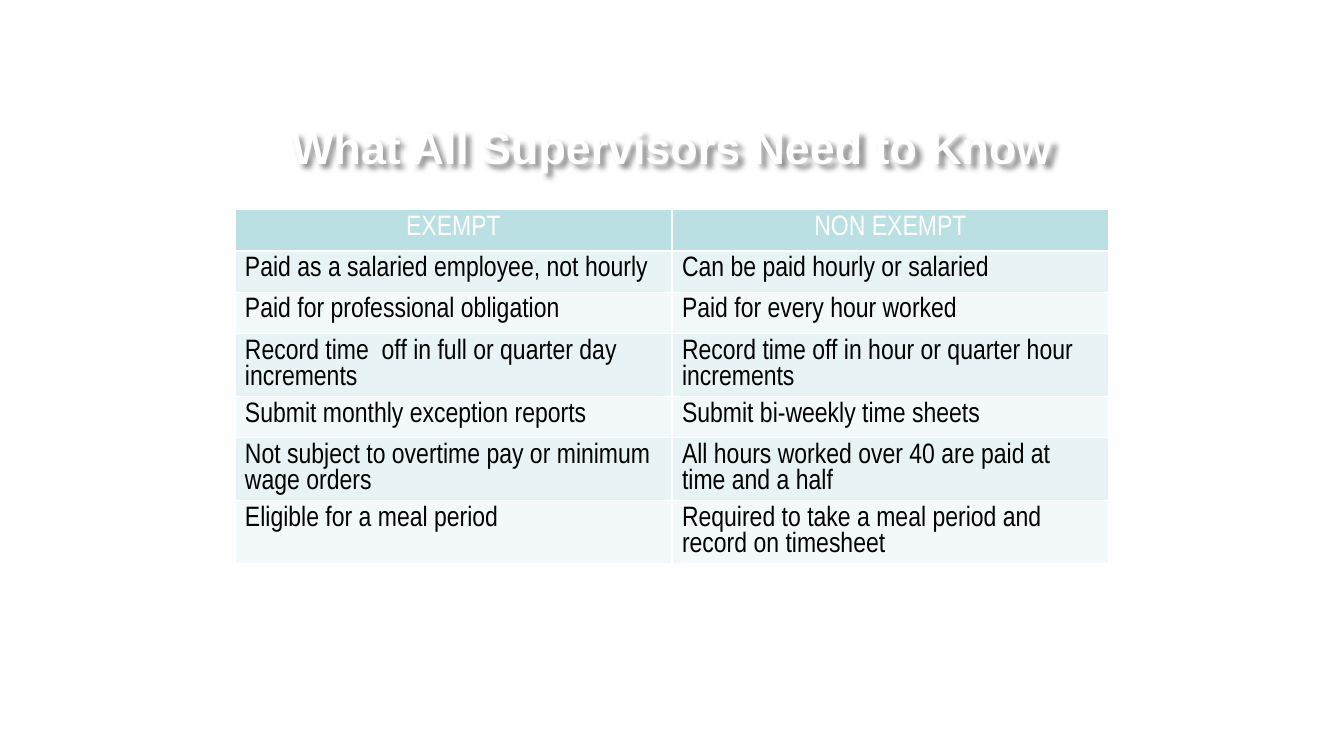
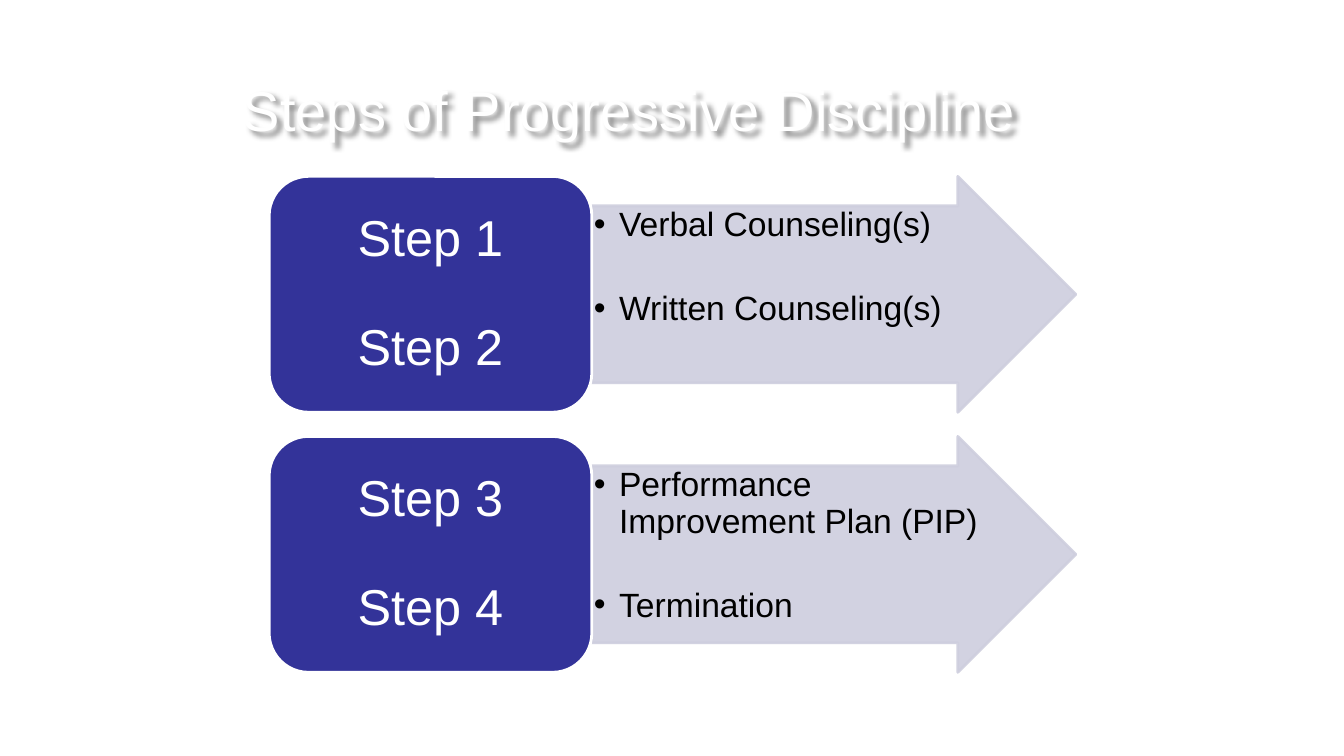
from lxml import etree
from pptx import Presentation
from pptx import util as u
from pptx.dml.color import RGBColor
from pptx.enum import shapes, text
from pptx.oxml.ns import qn

COLORS = {
    "white": "FFFFFF",
    "black": "000000",
    "header": "BBE0E3",
    "band_dark": "E7F3F4",
    "band_light": "F3F9FA",
    "step": "333399",
    "arrow": "CECEDE",
}
FONT = "Arial"
TABLE_FONT = "Arial Narrow"
TITLE_ONLY = 5

COMPARISON = [
    ("EXEMPT", "NON EXEMPT"),
    ("Paid as a salaried employee, not hourly", "Can be paid hourly or salaried"),
    ("Paid for professional obligation", "Paid for every hour worked"),
    ("Record time  off in full or quarter day increments",
     "Record time off in hour or quarter hour increments"),
    ("Submit monthly exception reports", "Submit bi-weekly time sheets"),
    ("Not subject to overtime pay or minimum wage orders",
     "All hours worked over 40 are paid at time and a half"),
    ("Eligible for a meal period",
     "Required to take a meal period and record on timesheet"),
]
STAGES = [
    (("Step 1", "Step 2"), ("Verbal Counseling(s)", "Written Counseling(s)")),
    (("Step 3", "Step 4"), ("Performance Improvement Plan (PIP)", "Termination")),
]


def rgb(name):
    return RGBColor.from_string(COLORS[name])


def add_element(parent, tag, **attributes):
    return etree.SubElement(parent, qn(tag), attributes)


def write(frame, lines, size, color, font=FONT, bold=False, spacing=None,
          align=text.PP_ALIGN.LEFT, gap=0, bullet=False):
    """Fill a text frame with one paragraph per line."""
    frame.word_wrap = True
    for index, line in enumerate(lines):
        para = frame.add_paragraph() if index else frame.paragraphs[0]
        if bullet:
            properties = para._p.get_or_add_pPr()
            properties.set("marL", str(u.Inches(0.25)))
            properties.set("indent", str(u.Inches(-0.25)))
            add_element(properties, "a:buFont", typeface=font)
            add_element(properties, "a:buChar", char="•")
        para.alignment = align
        if spacing:
            para.line_spacing = spacing
        if index:
            para.space_before = u.Pt(gap)
        span = para.add_run()
        span.text = line
        span.font.name = font
        span.font.size = u.Pt(size)
        span.font.bold = bold
        span.font.color.rgb = rgb(color)


def set_insets(frame, across, down):
    frame.margin_left = frame.margin_right = u.Inches(across)
    frame.margin_top = frame.margin_bottom = u.Inches(down)


def add_page(deck, title, left, top, size, bold=False):
    """Add a slide with a white, shadowed title."""
    page = deck.slides.add_slide(deck.slide_layouts[TITLE_ONLY])
    box = page.shapes.title
    box.left, box.top = u.Inches(left), u.Inches(top)
    box.width, box.height = u.Inches(10.67), u.Inches(0.66)
    frame = box.text_frame
    frame.auto_size = text.MSO_AUTO_SIZE.NONE
    frame.vertical_anchor = text.MSO_ANCHOR.MIDDLE
    write(frame, [title], size, "white", bold=bold, align=text.PP_ALIGN.CENTER)
    effects = add_element(box._element.spPr, "a:effectLst")
    shadow = add_element(effects, "a:outerShdw", blurRad=str(u.Pt(4)),
                         dist=str(u.Pt(4)), dir="2700000", algn="tl", rotWithShape="0")
    shade = add_element(shadow, "a:srgbClr", val=COLORS["black"])
    add_element(shade, "a:alpha", val="43000")
    return page


def add_borders(cell):
    properties = cell._tc.get_or_add_tcPr()
    for side in ("a:lnL", "a:lnR", "a:lnT", "a:lnB"):
        line = add_element(properties, side, w=str(u.Pt(1)))
        fill = add_element(line, "a:solidFill")
        add_element(fill, "a:srgbClr", val=COLORS["white"])


def add_comparison(page, rows, left, top, width, row_height):
    """Two-column table with a header and banded rows."""
    table = page.shapes.add_table(
        len(rows), len(rows[0]), u.Inches(left), u.Inches(top),
        u.Inches(width), u.Inches(row_height * len(rows))).table
    for row_index, row in enumerate(rows):
        header = row_index == 0
        band = "header" if header else ("band_light", "band_dark")[row_index % 2]
        for column_index, words in enumerate(row):
            cell = table.cell(row_index, column_index)
            add_borders(cell)
            cell.fill.solid()
            cell.fill.fore_color.rgb = rgb(band)
            write(cell.text_frame, [words], 20, "white" if header else "black",
                  font=TABLE_FONT,
                  align=text.PP_ALIGN.CENTER if header else text.PP_ALIGN.LEFT)


def add_block(page, kind, left, top, width, height, fill, line, alpha=None):
    block = page.shapes.add_shape(kind, u.Inches(left), u.Inches(top),
                                  u.Inches(width), u.Inches(height))
    block.shadow.inherit = False
    block.fill.solid()
    block.fill.fore_color.rgb = rgb(fill)
    block.line.color.rgb = rgb(line)
    block.line.width = u.Pt(2)
    if alpha:
        for color in block._element.spPr.iter(qn("a:srgbClr")):
            add_element(color, "a:alpha", val=str(alpha * 1000))
    return block


def add_stage(page, steps, actions, left, top, width, height):
    """Step box at the left, with an arrow of actions leading from it."""
    step_width = width * 0.4
    arrow_left, arrow_width = left + step_width, width - step_width
    # Arrow
    arrow = add_block(page, shapes.MSO_SHAPE.RIGHT_ARROW, arrow_left, top,
                      arrow_width, height, "arrow", "arrow", alpha=90)
    arrow.adjustments[0], arrow.adjustments[1] = 0.75, 0.5
    # Actions, as tall as the shaft and reaching into the head
    frame = page.shapes.add_textbox(
        u.Inches(arrow_left), u.Inches(top + height / 8),
        u.Inches(arrow_width - height * 3 / 8), u.Inches(height * 3 / 4)).text_frame
    set_insets(frame, 0.02, 0.02)
    write(frame, actions, 24, "black", spacing=0.9, gap=34, bullet=True)
    # Step box
    box = add_block(page, shapes.MSO_SHAPE.ROUNDED_RECTANGLE, left, top,
                    step_width, height, "step", "white")
    frame = box.text_frame
    frame.vertical_anchor = text.MSO_ANCHOR.MIDDLE
    set_insets(frame, 0.15, 0.07)
    write(frame, steps, 36, "white", spacing=0.9, gap=39,
          align=text.PP_ALIGN.CENTER)


def main():
    deck = Presentation()
    deck.slide_width, deck.slide_height = u.Inches(13.33), u.Inches(7.5)

    # Exempt and non-exempt comparison
    page = add_page(deck, "What All Supervisors Need to Know", 1.33, 1.12, 32, bold=True)
    add_comparison(page, COMPARISON, 2.33, 2.08, 8.67, 0.41)

    # Discipline stages
    page = add_page(deck, "Steps of Progressive Discipline", 0.9, 0.75, 40)
    for index, (steps, actions) in enumerate(STAGES):
        add_stage(page, steps, actions, 2.67, 1.75 + index * 2.58, 8, 2.34)

    deck.save("out.pptx")


if __name__ == "__main__":
    main()
